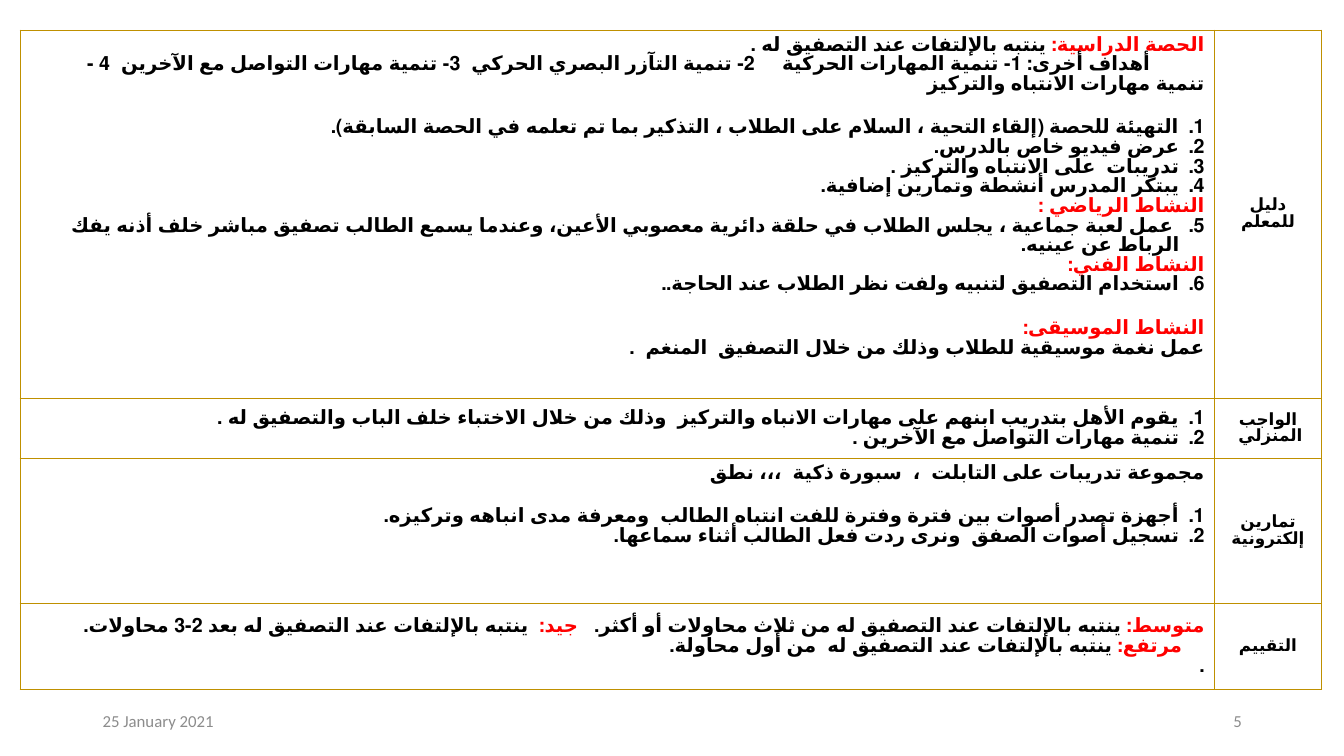
from pptx import Presentation
from pptx.dml.color import RGBColor
from pptx.enum.lang import MSO_LANGUAGE_ID as Language
from pptx.enum.text import MSO_ANCHOR as Anchor, PP_ALIGN as Align
from pptx.oxml import parse_xml
from pptx.oxml.ns import nsdecls
from pptx.util import Pt

RED = RGBColor(255, 0, 0)
BLACK = RGBColor(0, 0, 0)
GRAY = RGBColor(0x8C, 0x8C, 0x8C)
GOLD = RGBColor(0xBF, 0x90, 0x00)

GAP = 17
HANG = 18

GUIDE = [
    {"spans": [("الحصة الدراسية: ", RED), ("ينتبه بالإلتفات عند التصفيق له .", BLACK)]},
    {"spans": [("أهداف أخرى: 1- تنمية المهارات الحركية     2- تنمية التآزر البصري الحركي  3- تنمية مهارات التواصل مع الآخرين  4 -  تنمية مهارات الانتباه والتركيز ", BLACK)], "indent": 39},
    {"spans": [("التهيئة للحصة (إلقاء التحية ، السلام على الطلاب ، التذكير بما تم تعلمه في الحصة السابقة).", BLACK)], "number": 1, "before": GAP},
    {"spans": [("عرض فيديو خاص بالدرس.", BLACK)], "number": 1},
    {"spans": [("تدريبات  على الانتباه والتركيز .", BLACK)], "number": 1},
    {"spans": [("يبتكر المدرس أنشطة وتمارين إضافية.", BLACK)], "number": 1},
    {"spans": [("النشاط الرياضي :", RED)]},
    {"spans": [(" عمل لعبة جماعية ، يجلس الطلاب في حلقة دائرية معصوبي الأعين، وعندما يسمع الطالب تصفيق مباشر خلف أذنه يفك الرباط عن عينيه.", BLACK)], "number": 5},
    {"spans": [("النشاط الفني:", RED)]},
    {"spans": [("استخدام التصفيق لتنبيه ولفت نظر الطلاب عند الحاجة..", BLACK)], "number": 6},
    {"spans": [("النشاط الموسيقى: ", RED)], "before": GAP},
    {"spans": [("عمل نغمة موسيقية للطلاب وذلك من خلال التصفيق  المنغم  .", BLACK)]},
]
HOMEWORK = [
    {"spans": [("يقوم الأهل بتدريب ابنهم على مهارات الانباه والتركيز  وذلك من خلال الاختباء خلف الباب والتصفيق له .", BLACK)], "number": 1},
    {"spans": [("تنمية مهارات التواصل مع الآخرين . ", BLACK)], "number": 1},
]
EXERCISES = [
    {"spans": [("مجموعة تدريبات على التابلت  ،  سبورة ذكية  ،،، نطق ", BLACK)]},
    {"spans": [("أجهزة تصدر أصوات بين فترة وفترة للفت انتباه الطالب  ومعرفة مدى انباهه وتركيزه.", BLACK)], "number": 1, "before": GAP},
    {"spans": [("تسجيل أصوات الصفق  ونرى ردت فعل الطالب أثناء سماعها.", BLACK)], "number": 1},
]
ASSESSMENT = [
    {"spans": [("متوسط: ", RED), ("ينتبه بالإلتفات عند التصفيق له من ثلاث محاولات أو أكثر.   ", BLACK),
               ("جيد: ", RED), (" ينتبه بالإلتفات عند التصفيق له بعد 2-3 محاولات.", BLACK)]},
    {"spans": [("مرتفع: ", RED), ("ينتبه بالإلتفات عند التصفيق له  من أول محاولة.", BLACK)], "indent": 16},
    {"spans": [(".", BLACK)]},
]
ROWS = [
    ("دليل للمعلم", GUIDE, 262.8, Anchor.TOP),
    ("الواجب المنزلي ", HOMEWORK, 43.2, Anchor.MIDDLE),
    ("تمارين إلكترونية", EXERCISES, 103.7, Anchor.TOP),
    ("التقييم", ASSESSMENT, 61.2, Anchor.MIDDLE),
]
COLUMNS = [853.2, 76.3]
TABLE_LEFT, TABLE_TOP = 14.4, 21.6
FOOTERS = [("25 January 2021", 66.2, Align.LEFT), ("5", 678.2, Align.RIGHT)]


def write_paragraph(para, line, size, align):
    para.alignment = align
    para.space_before = Pt(line.get("before", 0))
    para.font.name, para.font.size, para.font.bold = "Lato", Pt(size), True
    properties = para.font._element.getparent()
    properties.set("rtl", "1")
    if "number" in line:
        properties.set("marL", str(Pt(HANG)))
        properties.set("indent", str(-Pt(HANG)))
        numbering = parse_xml(f'<a:buAutoNum {nsdecls("a")} type="arabicPeriod"/>')
        if line["number"] > 1:
            numbering.set("startAt", str(line["number"]))
        para.font._element.addprevious(numbering)
    elif "indent" in line:
        properties.set("indent", str(Pt(line["indent"])))
    for text, color in line["spans"]:
        span = para.add_run()
        span.text = text
        span.font.color.rgb = color
        span.font.language_id = Language.ARABIC


def fill_cell(cell, lines, size, align, anchor):
    cell.vertical_anchor = anchor
    cell.fill.background()
    for index, side in enumerate("LRTB"):
        cell._tc.tcPr.insert(index, parse_xml(
            f'<a:ln{side} {nsdecls("a")} w="{Pt(1)}"><a:solidFill>'
            f'<a:srgbClr val="{GOLD}"/></a:solidFill></a:ln{side}>'))
    frame = cell.text_frame
    for index, line in enumerate(lines):
        para = frame.add_paragraph() if index else frame.paragraphs[0]
        write_paragraph(para, line, size, align)


def add_lesson_table(page):
    heights = [row[2] for row in ROWS]
    frame = page.shapes.add_table(len(ROWS), len(COLUMNS), Pt(TABLE_LEFT), Pt(TABLE_TOP),
                                  Pt(sum(COLUMNS)), Pt(sum(heights)))
    table = frame.table
    table.first_row = table.horz_banding = False
    for column, width in zip(table.columns, COLUMNS):
        column.width = Pt(width)
    for index, (label, lines, height, anchor) in enumerate(ROWS):
        table.rows[index].height = Pt(height)
        fill_cell(table.cell(index, 0), lines, 14, Align.RIGHT, anchor)
        fill_cell(table.cell(index, 1), [{"spans": [(label, BLACK)]}], 12, Align.CENTER, Anchor.MIDDLE)


def add_footer(page, text, left, align):
    box = page.shapes.add_textbox(Pt(left), Pt(500.4), Pt(216), Pt(28.8))
    frame = box.text_frame
    frame.word_wrap = True
    frame.vertical_anchor = Anchor.MIDDLE
    para = frame.paragraphs[0]
    para.text, para.alignment = text, align
    para.font.name, para.font.size = "Calibri", Pt(12)
    para.font.color.rgb = GRAY


def main():
    deck = Presentation()
    deck.slide_width, deck.slide_height = Pt(960), Pt(540)
    page = deck.slides.add_slide(deck.slide_layouts[6])
    add_lesson_table(page)
    for footer in FOOTERS:
        add_footer(page, *footer)
    deck.save("out.pptx")


if __name__ == "__main__":
    main()
